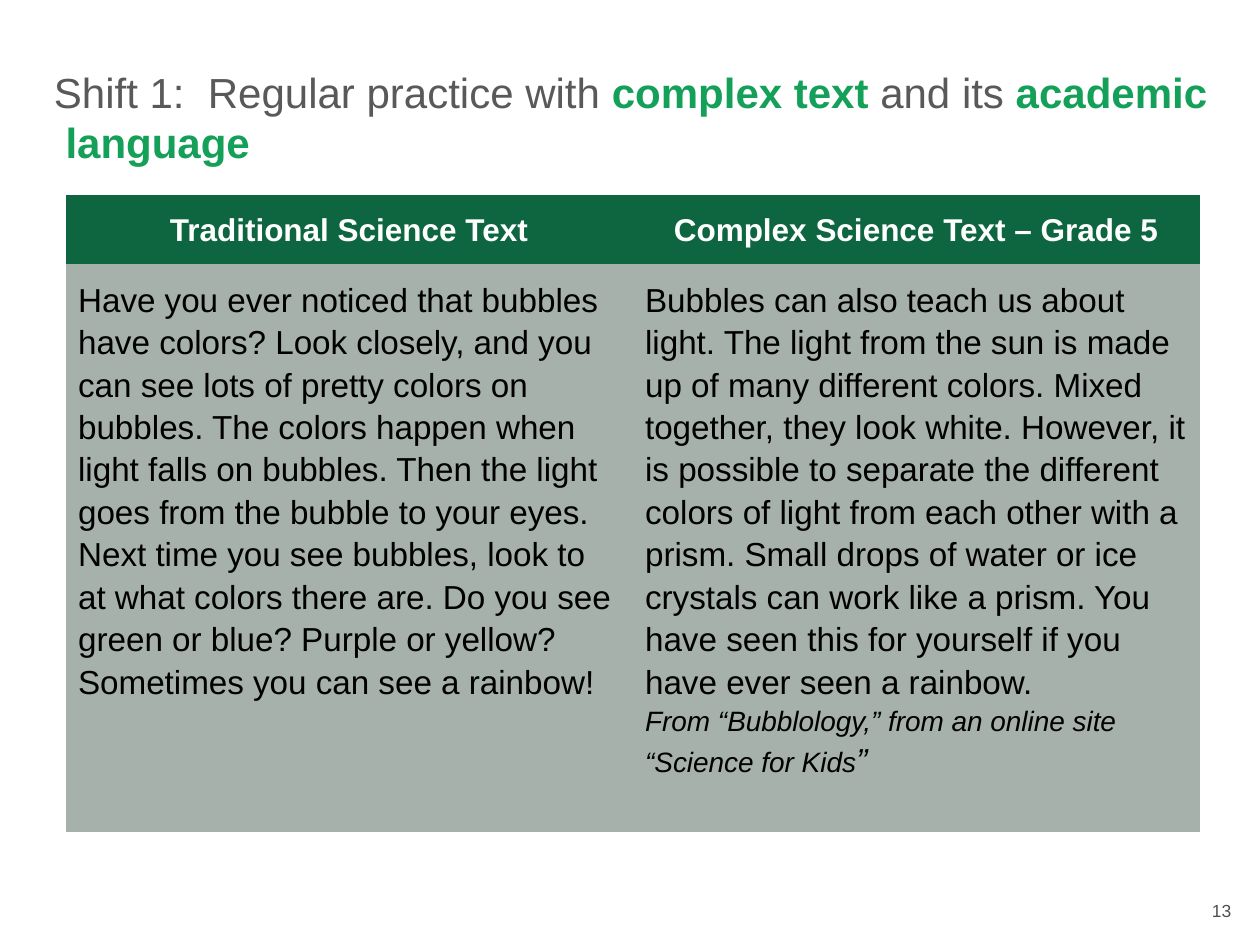
from pptx import Presentation
from pptx.dml.color import RGBColor
from pptx.enum.text import MSO_ANCHOR as Anchor, PP_ALIGN as Align
from pptx.oxml.ns import qn
from pptx.util import Inches, Pt

GREY, GREEN, WHITE, BLACK = "595959", "15A059", "FFFFFF", "000000"
HEADER_FILL, BODY_FILL, NUMBER_GREY = "0E6641", "A6B1AC", "50514F"
NO_STYLE_NO_GRID = "{2D5ABB26-0587-4C30-8999-92F81FD0307C}"

TITLE = [
    ("Shift 1:  Regular practice with ", {}),
    ("complex text", {"color": GREEN, "bold": True}),
    (" and its ", {}),
    ("academic  language", {"color": GREEN, "bold": True}),
]
HEADERS = ["Traditional Science Text", "Complex Science Text – Grade 5"]
TRADITIONAL = (
    "Have you ever noticed that bubbles have colors? Look closely, and you can see "
    "lots of pretty colors on bubbles. The colors happen when light falls on bubbles. "
    "Then the light goes from the bubble to your eyes. Next time you see bubbles, look "
    "to at what colors there are. Do you see green or blue? Purple or yellow? "
    "Sometimes you can see a rainbow!"
)
COMPLEX = (
    "Bubbles can also teach us about light. The light from the sun is made up of many "
    "different colors. Mixed together, they look white. However, it is possible to "
    "separate the different colors of light from each other with a prism. Small drops "
    "of water or ice crystals can work like a prism. You have seen this for yourself "
    "if you have ever seen a rainbow."
)
CITATION = [
    ("From “Bubblology,” from an online site “Science for Kids", {"size": 16, "italic": True}),
    ("”", {"italic": True}),
]
BODIES = [[[(TRADITIONAL, {})]], [[(COMPLEX, {})], CITATION]]
ROW_HEIGHTS = [0.52, 4.19]


def rgb(value):
    return RGBColor.from_string(value)


def write(frame, paragraphs, size, color, bold=False, align=Align.LEFT, spacing=None):
    for index, runs in enumerate(paragraphs):
        paragraph = frame.add_paragraph() if index else frame.paragraphs[0]
        paragraph.alignment = align
        paragraph.line_spacing = spacing
        for text, changes in runs:
            run = paragraph.add_run()
            run.text = text
            font = run.font
            font.name = "Arial"
            font.size = Pt(changes.get("size", size))
            font.bold = changes.get("bold", bold)
            font.italic = changes.get("italic", False)
            font.color.rgb = rgb(changes.get("color", color))


def set_margins(target, side, vertical):
    target.margin_left = target.margin_right = Inches(side)
    target.margin_top = target.margin_bottom = Inches(vertical)


def add_text(slide, box, paragraphs, vertical=0.1, anchor=Anchor.TOP, **style):
    frame = slide.shapes.add_textbox(*map(Inches, box)).text_frame
    frame.word_wrap = True
    frame.vertical_anchor = anchor
    set_margins(frame, 0.1, vertical)
    write(frame, paragraphs, **style)


def add_comparison(slide):
    box = (0.52, 1.55, 9, sum(ROW_HEIGHTS))
    table_shape = slide.shapes.add_table(2, 2, *map(Inches, box))
    table = table_shape.table
    table_shape._element.find(".//" + qn("a:tableStyleId")).text = NO_STYLE_NO_GRID
    for row, height in zip(table.rows, ROW_HEIGHTS):
        row.height = Inches(height)
    header_style = {"size": 18, "color": WHITE, "bold": True, "align": Align.CENTER}
    body_style = {"size": 19, "color": BLACK}
    rows = [
        ([[[(header, {})]] for header in HEADERS], HEADER_FILL, header_style),
        (BODIES, BODY_FILL, body_style),
    ]
    for row_index, (contents, fill, style) in enumerate(rows):
        for column_index, paragraphs in enumerate(contents):
            cell = table.cell(row_index, column_index)
            set_margins(cell, 0.1, 0.1)
            cell.fill.solid()
            cell.fill.fore_color.rgb = rgb(fill)
            write(cell.text_frame, paragraphs, spacing=1.15, **style)


def main():
    presentation = Presentation()
    presentation.slide_width, presentation.slide_height = Inches(10), Inches(7.5)
    slide = presentation.slides.add_slide(presentation.slide_layouts[6])
    add_text(slide, (8.28, 7.09, 1.59, 0.27), [[("13", {})]], vertical=0.05,
             size=10, color=NUMBER_GREY, align=Align.RIGHT)
    add_text(slide, (0.33, 0.3, 9.38, 1.25), [TITLE], anchor=Anchor.MIDDLE,
             size=24, color=GREY)
    add_comparison(slide)
    presentation.save("out.pptx")


if __name__ == "__main__":
    main()
